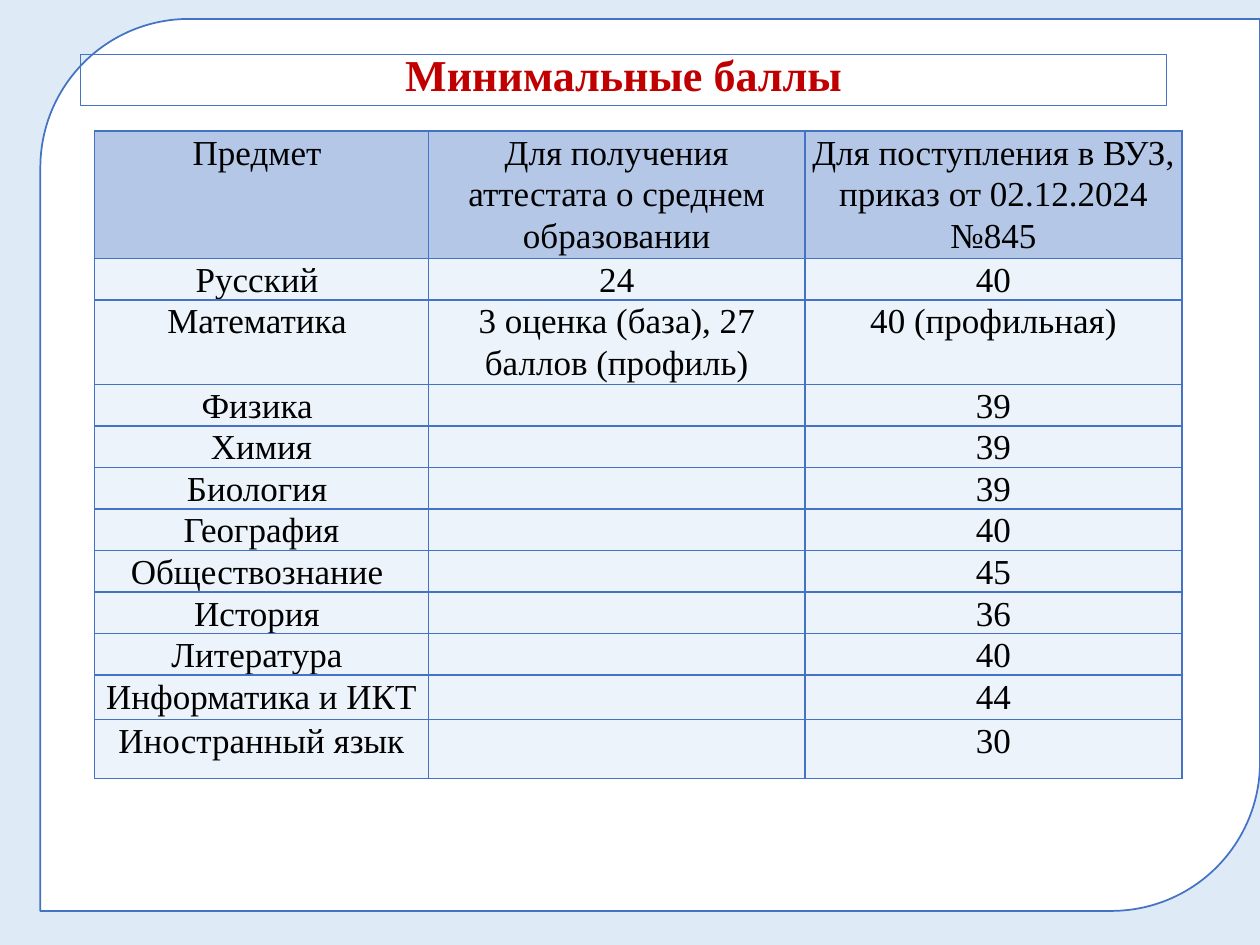
from lxml.etree import SubElement
from pptx import Presentation
from pptx.dml.color import RGBColor
from pptx.enum.shapes import MSO_SHAPE as Shape
from pptx.enum.text import MSO_ANCHOR as Anchor, MSO_AUTO_SIZE as AutoSize, PP_ALIGN as Align
from pptx.oxml.ns import qn
from pptx.util import Inches, Pt

COLORS = {
    "background": "DEEBF7",
    "panel": "FFFFFF",
    "border": "4472C4",
    "title": "C00000",
    "header": "B4C7E7",
    "body": "ECF3FA",
    "text": "000000",
}
FONT = "Times New Roman"
COLUMN_WIDTHS = [2.65, 2.99, 2.99]
ROW_HEIGHTS = [1.01, 0.32, 0.67] + [0.32] * 7 + [0.35, 0.47]
SCORES = [
    ("Предмет ", "Для получения аттестата о среднем образовании",
     "Для поступления в ВУЗ, приказ от 02.12.2024 №845"),
    ("Русский ", "24", "40"),
    ("Математика ", "3 оценка (база), 27 баллов (профиль)", "40 (профильная)"),
    ("Физика ", "", "39"),
    ("Химия", "", "39"),
    ("Биология ", "", "39"),
    ("География", "", "40"),
    ("Обществознание ", "", "45"),
    ("История ", "", "36"),
    ("Литература ", "", "40"),
    ("Информатика и ИКТ", "", "44"),
    ("Иностранный язык", "", "30"),
]


def color(name):
    return RGBColor.from_string(COLORS[name])


def paint(fill, name):
    fill.solid()
    fill.fore_color.rgb = color(name)


def outline(line, width):
    line.color.rgb = color("border")
    line.width = Pt(width)


def style_paragraph(paragraph, size, color_name, spacing, bold=False):
    paragraph.alignment = Align.CENTER
    paragraph.line_spacing = spacing
    paragraph.font.name = FONT
    paragraph.font.size = Pt(size)
    paragraph.font.bold = bold
    paragraph.font.color.rgb = color(color_name)


def add_panel(slide):
    panel = slide.shapes.add_shape(
        Shape.ROUND_2_DIAG_RECTANGLE,
        Inches(0.32), Inches(0.15), Inches(9.68), Inches(7.08))
    panel.shadow.inherit = False
    paint(panel.fill, "panel")
    outline(panel.line, 1)


def add_borders(cell):
    properties = cell._tc.get_or_add_tcPr()
    for position, side in enumerate(("a:lnL", "a:lnR", "a:lnT", "a:lnB")):
        border = properties.makeelement(qn(side), {"w": str(Pt(1))})
        properties.insert(position, border)
        solid = SubElement(border, qn("a:solidFill"))
        SubElement(solid, qn("a:srgbClr"), val=COLORS["border"])


def fill_cell(cell, text, fill_name):
    cell.margin_left = cell.margin_right = Inches(0.05)
    cell.margin_top = cell.margin_bottom = 0
    cell.text = text
    paragraph = cell.text_frame.paragraphs[0]
    style_paragraph(paragraph, 20, "text", 1.07)
    paragraph.space_after = Pt(8)
    paint(cell.fill, fill_name)
    add_borders(cell)


def add_score_table(slide):
    table = slide.shapes.add_table(
        len(SCORES), len(COLUMN_WIDTHS), Inches(0.75), Inches(1.04),
        Inches(sum(COLUMN_WIDTHS)), Inches(sum(ROW_HEIGHTS))).table
    table.horz_banding = False
    for column, width in zip(table.columns, COLUMN_WIDTHS):
        column.width = Inches(width)
    for index, (row, height, texts) in enumerate(zip(table.rows, ROW_HEIGHTS, SCORES)):
        row.height = Inches(height)
        for cell, text in zip(row.cells, texts):
            fill_cell(cell, text, "body" if index else "header")


def place_title(slide):
    title = slide.shapes.title
    title.left, title.top = Inches(0.64), Inches(0.43)
    title.width, title.height = Inches(8.62), Inches(0.41)
    outline(title.line, 0.75)
    frame = title.text_frame
    frame.text = "Минимальные баллы"
    frame.word_wrap = True
    frame.auto_size = AutoSize.NONE
    frame.vertical_anchor = Anchor.MIDDLE
    style_paragraph(frame.paragraphs[0], 25.2, "title", 0.7, bold=True)
    title._element.getparent().append(title._element)


def main():
    deck = Presentation()
    deck.slide_width, deck.slide_height = Inches(10), Inches(7.5)
    slide = deck.slides.add_slide(deck.slide_layouts[5])
    paint(slide.background.fill, "background")
    add_panel(slide)
    add_score_table(slide)
    place_title(slide)
    deck.save("out.pptx")


if __name__ == "__main__":
    main()
